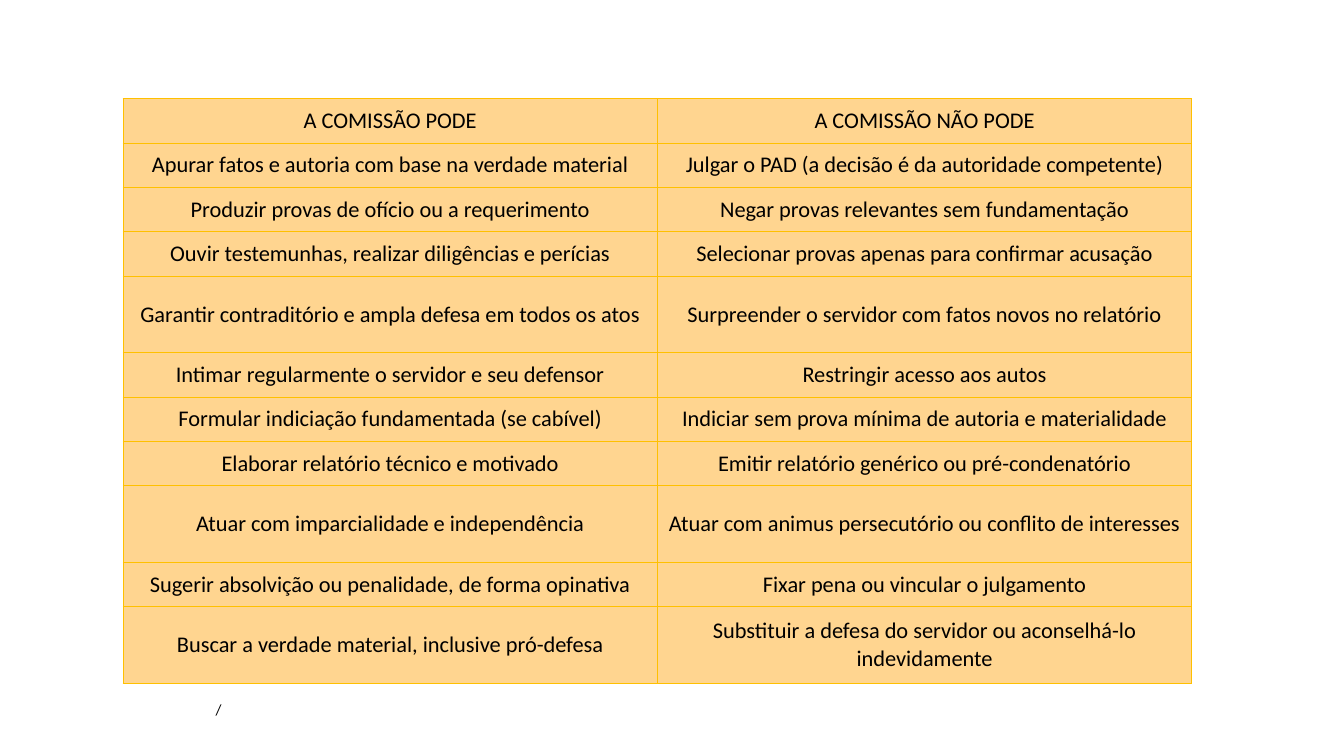
from dataclasses import dataclass

from lxml.etree import SubElement
from pptx import Presentation
from pptx.dml.color import RGBColor
from pptx.enum.text import MSO_ANCHOR, MSO_AUTO_SIZE, PP_ALIGN
from pptx.oxml.ns import qn
from pptx.util import Inches, Pt


@dataclass(frozen=True)
class Theme:
    font: str = "Calibri"
    table_size: float = 16
    note_size: float = 11
    ink: str = "000000"
    cell_fill: str = "FFD590"
    border: str = "FFC000"
    border_width: float = 0.5


COMMISSION_RULES = [
    ("A COMISSÃO PODE", "A COMISSÃO NÃO PODE"),
    ("Apurar fatos e autoria com base na verdade material",
     "Julgar o PAD (a decisão é da autoridade competente)"),
    ("Produzir provas de ofício ou a requerimento",
     "Negar provas relevantes sem fundamentação"),
    ("Ouvir testemunhas, realizar diligências e perícias",
     "Selecionar provas apenas para confirmar acusação"),
    ("Garantir contraditório e ampla defesa em todos os atos",
     "Surpreender o servidor com fatos novos no relatório"),
    ("Intimar regularmente o servidor e seu defensor",
     "Restringir acesso aos autos"),
    ("Formular indiciação fundamentada (se cabível)",
     "Indiciar sem prova mínima de autoria e materialidade"),
    ("Elaborar relatório técnico e motivado",
     "Emitir relatório genérico ou pré-condenatório"),
    ("Atuar com imparcialidade e independência",
     "Atuar com animus persecutório ou conflito de interesses"),
    ("Sugerir absolvição ou penalidade, de forma opinativa",
     "Fixar pena ou vincular o julgamento"),
    ("Buscar a verdade material, inclusive pró-defesa",
     "Substituir a defesa do servidor ou aconselhá-lo indevidamente"),
]
ROW_HEIGHT, TALL_ROW_HEIGHT = 0.44, 0.76
TALL_ROWS = {4, 8, 10}


def set_attributes(target, values):
    for name, value in values.items():
        setattr(target, name, value)


class SlideBuilder:
    def __init__(self, page, theme):
        self.page = page
        self.theme = theme

    def fill_text(self, frame, text, size, align):
        para = frame.paragraphs[0]
        para.alignment = align
        span = para.add_run()
        span.text = text
        set_attributes(span.font, {"name": self.theme.font, "size": Pt(size)})
        span.font.color.rgb = RGBColor.from_string(self.theme.ink)

    def text_box(self, text, left, top, width, height):
        box = self.page.shapes.add_textbox(
            Inches(left), Inches(top), Inches(width), Inches(height))
        set_attributes(box.text_frame, {
            "word_wrap": True, "auto_size": MSO_AUTO_SIZE.SHAPE_TO_FIT_TEXT})
        self.fill_text(box.text_frame, text, self.theme.note_size, PP_ALIGN.LEFT)

    def border(self, cell):
        properties = cell._tc.get_or_add_tcPr()
        for side in ("lnL", "lnR", "lnT", "lnB"):
            line = SubElement(properties, qn(f"a:{side}"),
                              w=str(Pt(self.theme.border_width)))
            fill = SubElement(line, qn("a:solidFill"))
            SubElement(fill, qn("a:srgbClr"), val=self.theme.border)

    def cell(self, cell, text):
        set_attributes(cell, {
            "vertical_anchor": MSO_ANCHOR.MIDDLE,
            "margin_left": Inches(0.09), "margin_right": Inches(0.09),
            "margin_top": Inches(0.04), "margin_bottom": Inches(0.04)})
        self.border(cell)
        cell.fill.solid()
        cell.fill.fore_color.rgb = RGBColor.from_string(self.theme.cell_fill)
        self.fill_text(cell.text_frame, text, self.theme.table_size, PP_ALIGN.CENTER)

    def table(self, rows, left, top, width, heights):
        table = self.page.shapes.add_table(
            len(rows), len(rows[0]), Inches(left), Inches(top),
            Inches(width), Inches(sum(heights))).table
        set_attributes(table, {"first_row": False, "horz_banding": False})
        for row, height, texts in zip(table.rows, heights, rows):
            row.height = Inches(height)
            for cell, text in zip(row.cells, texts):
                self.cell(cell, text)


def main():
    deck = Presentation()
    set_attributes(deck, {"slide_width": Inches(13.33), "slide_height": Inches(7.5)})
    blank_layout = deck.slide_layouts[6]
    builder = SlideBuilder(deck.slides.add_slide(blank_layout), Theme())
    builder.text_box("/", 2.04, 6.9, 9.25, 0.29)
    heights = [TALL_ROW_HEIGHT if index in TALL_ROWS else ROW_HEIGHT
               for index in range(len(COMMISSION_RULES))]
    builder.table(COMMISSION_RULES, 1.22, 0.98, 10.6, heights)
    deck.save("out.pptx")


if __name__ == "__main__":
    main()
